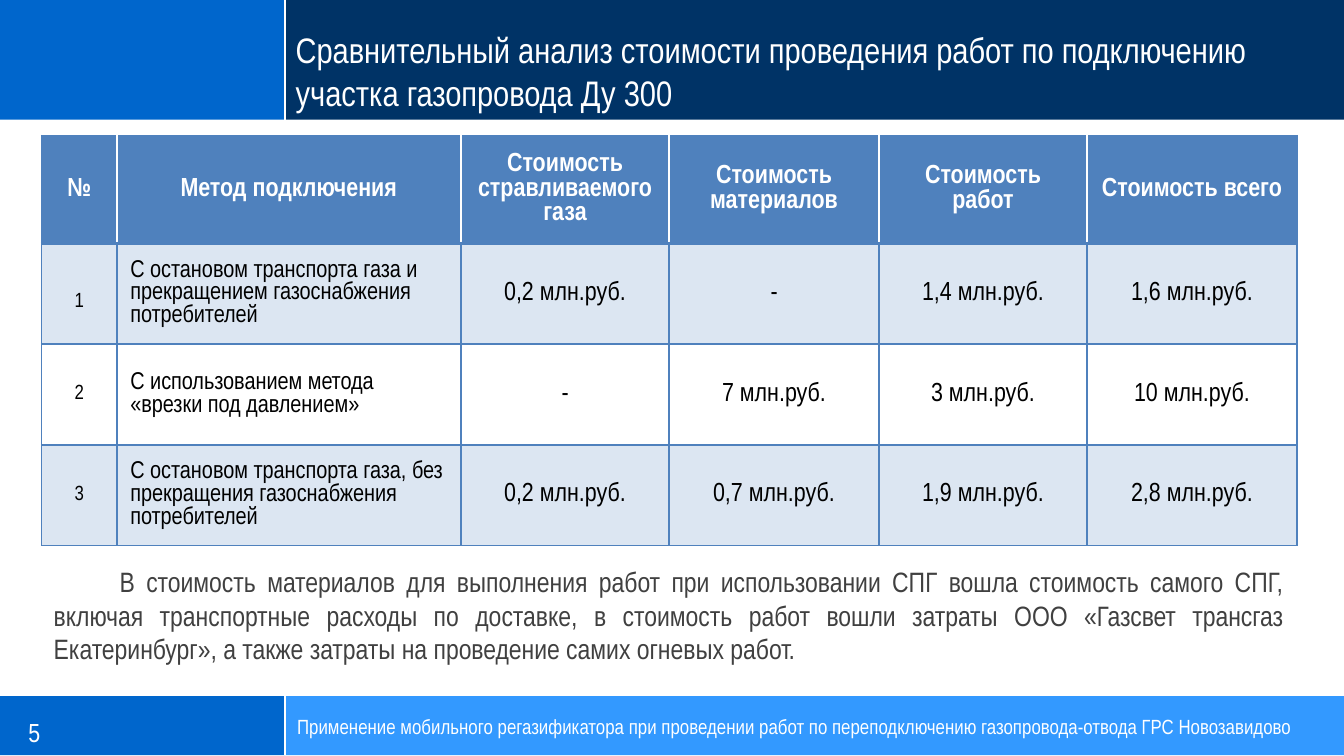
from lxml import etree
from pptx import Presentation
from pptx.dml.color import RGBColor
from pptx.enum.shapes import MSO_CONNECTOR, MSO_SHAPE
from pptx.enum.text import MSO_ANCHOR, MSO_AUTO_SIZE, PP_ALIGN
from pptx.oxml.ns import qn
from pptx.util import Emu, Pt

LEFT, CENTER, JUSTIFY = PP_ALIGN.LEFT, PP_ALIGN.CENTER, PP_ALIGN.JUSTIFY
TOP, MIDDLE = MSO_ANCHOR.TOP, MSO_ANCHOR.MIDDLE
RECTANGLE, STRAIGHT = MSO_SHAPE.RECTANGLE, MSO_CONNECTOR.STRAIGHT
NO_AUTOFIT = MSO_AUTO_SIZE.NONE

FONT = "Arial Narrow"
WHITE, BLACK, GREY = "FFFFFF", "000000", "404040"
BLUE, NAVY, SKY = "0066CC", "003366", "3399FF"
TABLE_BLUE, TABLE_TINT = "4F81BD", "DCE6F2"
SLIDE_WIDTH, SPLIT = 1000, 212

TITLE = "Сравнительный анализ стоимости проведения работ по подключению участка газопровода Ду 300"
TOPIC = ("Применение мобильного регазификатора при проведении работ по "
         "переподключению газопровода-отвода ГРС Новозавидово")
NOTE = ("В стоимость материалов для выполнения работ при использовании СПГ вошла "
        "стоимость самого СПГ, включая транспортные расходы по доставке, в стоимость "
        "работ вошли затраты ООО «Газсвет трансгаз Екатеринбург», а также затраты на "
        "проведение самих огневых работ.")
HEADINGS = ["№", "Метод подключения", "Стоимость стравливаемого газа",
            "Стоимость материалов", "Стоимость работ", "Стоимость всего"]
METHODS = [
    ["1", "С остановом транспорта газа и прекращением газоснабжения потребителей",
     "0,2 млн.руб.", "-", "1,4 млн.руб.", "1,6 млн.руб."],
    ["2", "С использованием метода «врезки под давлением»",
     "-", "7 млн.руб.", "3 млн.руб.", "10 млн.руб."],
    ["3", "С остановом транспорта газа, без прекращения газоснабжения потребителей",
     "0,2 млн.руб.", "0,7 млн.руб.", "1,9 млн.руб.", "2,8 млн.руб."],
]
COLUMNS = [56, 256, 155, 156, 155, 156]
ROWS = [80, 75, 75, 75]
BODY_SIZES = [11, 13, 14, 14, 14, 14]


def px(length):
    """Turn hundredths of an inch into EMU."""
    return Emu(length * 9144)


def color(value):
    """Turn a hex string into a colour."""
    return RGBColor.from_string(value)


def write(frame, text, size, ink, bold=False, align=LEFT, indent=0):
    """Put one formatted paragraph into a text frame."""
    frame.word_wrap = True
    paragraph = frame.paragraphs[0]
    paragraph.alignment = align
    if indent:
        properties = paragraph._p.get_or_add_pPr()
        properties.set("marL", "0")
        properties.set("indent", str(px(indent)))
    run = paragraph.add_run()
    run.text = text
    run.font.name, run.font.size, run.font.bold = FONT, Pt(size), bold
    run.font.color.rgb = color(ink)


def add_label(slide, box, text, size, ink, **format):
    """Add a text box with narrow insets."""
    frame = slide.shapes.add_textbox(*map(px, box)).text_frame
    frame.margin_left = frame.margin_right = px(9)
    frame.margin_top = frame.margin_bottom = px(4)
    write(frame, text, size, ink, **format)


def add_band(slide, box, left_fill, right_fill):
    """Draw a two-coloured band with a white divider."""
    left, top, width, height = box
    middle = left + SPLIT
    parts = [(left, SPLIT, left_fill), (middle, width - SPLIT, right_fill)]
    for start, part_width, fill in parts:
        part = slide.shapes.add_shape(
            RECTANGLE, px(start), px(top), px(part_width), px(height))
        part.shadow.inherit = False
        part.fill.solid()
        part.fill.fore_color.rgb = color(fill)
        part.line.fill.background()
    divider = slide.shapes.add_connector(
        STRAIGHT, px(middle), px(top), px(middle), px(top + height))
    divider.line.color.rgb = color(WHITE)
    divider.line.width = Pt(1.25)
    etree.SubElement(divider._element.spPr, qn("a:effectLst"))


def add_header(slide, box):
    """Draw the top band and place the title over it."""
    left, top, width, height = box
    add_band(slide, box, BLUE, NAVY)
    title = slide.shapes.title
    slide.shapes._spTree.append(title._element)
    title.left, title.top = px(left + SPLIT - 2), px(top + 16)
    title.width, title.height = px(738), px(height - 15)
    title.text_frame.auto_size = NO_AUTOFIT
    title.text_frame.vertical_anchor = TOP
    write(title.text_frame, TITLE, 19, WHITE)


def add_footer(slide, box):
    """Draw the bottom band with the page number and topic."""
    left, top, width, height = box
    add_band(slide, box, BLUE, SKY)
    add_label(slide, (left + SPLIT, top + 9, 766, 28), TOPIC, 11, WHITE)
    add_label(slide, (left + 12, top + 11, SPLIT, 33), "5", 14, WHITE)


def set_border(cell, side, ink, width):
    """Draw one side of a table cell."""
    line = etree.SubElement(cell._tc.get_or_add_tcPr(), qn(f"a:ln{side}"), w=str(Pt(width)))
    fill = etree.SubElement(line, qn("a:solidFill"))
    etree.SubElement(fill, qn("a:srgbClr"), val=ink)


def format_cell(cell, row, column):
    """Set the borders, fill and anchor of a cell by its position."""
    heading = row == 0
    left = WHITE if heading and column > 0 else TABLE_BLUE
    right = WHITE if heading and column < len(COLUMNS) - 1 else TABLE_BLUE
    set_border(cell, "L", left, 1)
    set_border(cell, "R", right, 1)
    set_border(cell, "T", TABLE_BLUE, 2 if row == 1 else 1)
    set_border(cell, "B", TABLE_BLUE, 2 if heading else 1)
    cell.fill.solid()
    cell.fill.fore_color.rgb = color(
        TABLE_BLUE if heading else TABLE_TINT if row % 2 else WHITE)
    cell.vertical_anchor = MIDDLE
    cell.margin_left = cell.margin_right = px(10)
    cell.margin_top = cell.margin_bottom = px(5)


def add_cost_table(slide, left, top):
    """Add the table that compares the costs of the methods."""
    table = slide.shapes.add_table(
        len(ROWS), len(COLUMNS), px(left), px(top), px(sum(COLUMNS)), px(sum(ROWS))).table
    for column, width in zip(table.columns, COLUMNS):
        column.width = px(width)
    for row, height in zip(table.rows, ROWS):
        row.height = px(height)
    for row, texts in enumerate([HEADINGS] + METHODS):
        for column, text in enumerate(texts):
            cell = table.cell(row, column)
            format_cell(cell, row, column)
            heading = row == 0
            write(cell.text_frame, text, 14 if heading else BODY_SIZES[column],
                  WHITE if heading else BLACK, bold=heading,
                  align=LEFT if column == 1 and not heading else CENTER)
    table.cell(1, 0).margin_top = px(17)


def main():
    """Build the slide and save it."""
    deck = Presentation()
    deck.slide_width = px(SLIDE_WIDTH)
    deck.slide_height = deck.slide_width * 9 // 16
    slide = deck.slides.add_slide(deck.slide_layouts[5])
    add_footer(slide, (0, 518, SLIDE_WIDTH, 44))
    add_header(slide, (0, 0, SLIDE_WIDTH, 89))
    add_cost_table(slide, 31, 101)
    add_label(slide, (31, 416, 934, 92), NOTE, 15, GREY, align=JUSTIFY, indent=49)
    deck.save("out.pptx")


if __name__ == "__main__":
    main()
